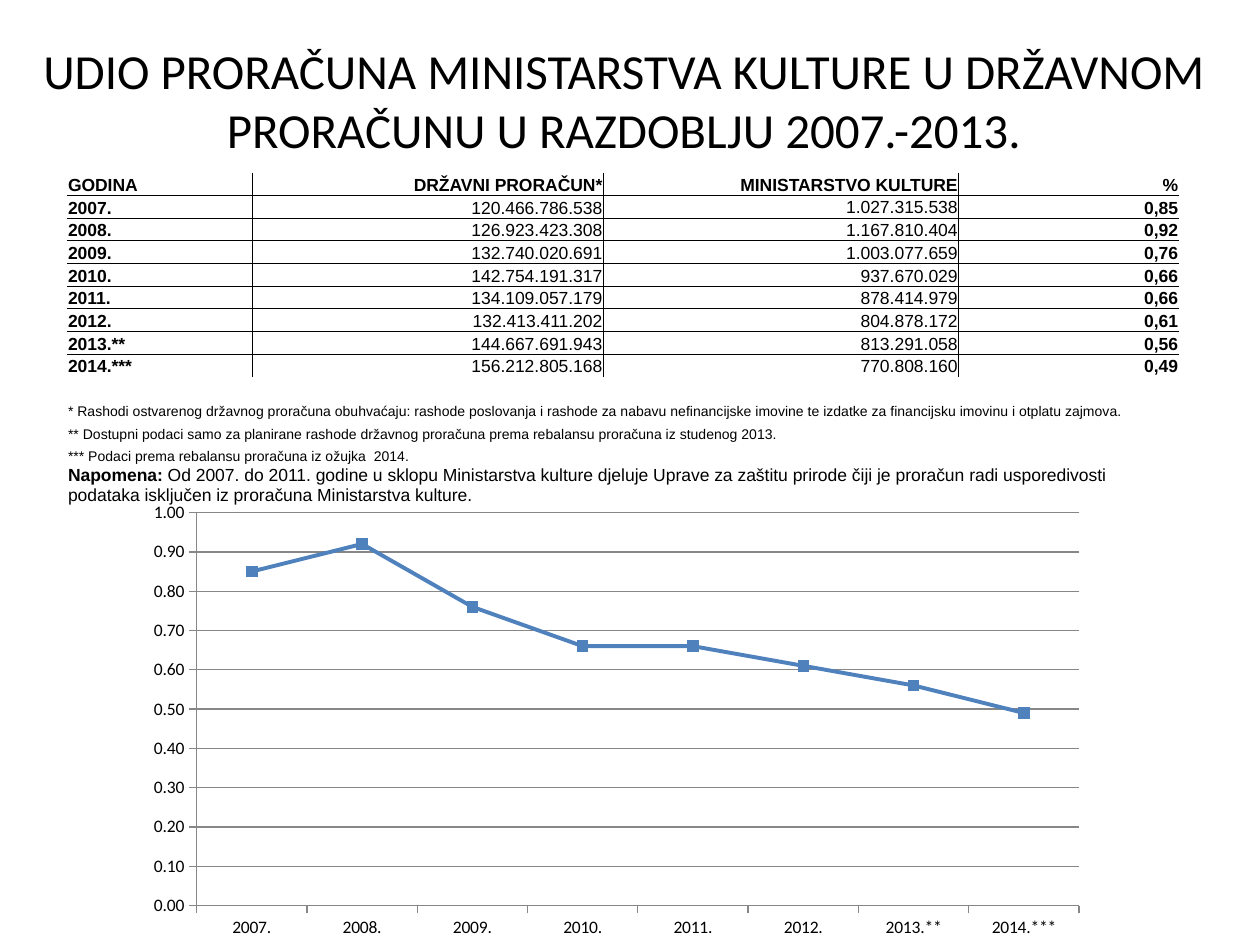
from lxml.etree import SubElement as Sub
from pptx import Presentation
from pptx.chart.data import CategoryChartData
from pptx.dml.color import RGBColor
from pptx.enum.chart import XL_CHART_TYPE as Kind, XL_MARKER_STYLE as Mark
from pptx.enum.chart import XL_TICK_MARK as Tick
from pptx.enum.text import MSO_ANCHOR as Anchor, MSO_AUTO_SIZE as Fit, PP_ALIGN as Align
from pptx.oxml import parse_xml
from pptx.oxml.ns import nsdecls, qn
from pptx.util import Inches, Pt

TITLE = "UDIO PRORAČUNA MINISTARSTVA KULTURE U DRŽAVNOM PRORAČUNU U RAZDOBLJU 2007.-2013."
HEAD = ("GODINA", "DRŽAVNI PRORAČUN*", "MINISTARSTVO KULTURE", "%")
YEARS = [
    ("2007.", "120.466.786.538", "1.027.315.538", "0,85"),
    ("2008.", "126.923.423.308", "1.167.810.404", "0,92"),
    ("2009.", "132.740.020.691", "1.003.077.659", "0,76"),
    ("2010.", "142.754.191.317", "937.670.029", "0,66"),
    ("2011.", "134.109.057.179", "878.414.979", "0,66"),
    ("2012.", "132.413.411.202", "804.878.172", "0,61"),
    ("2013.**", "144.667.691.943", "813.291.058", "0,56"),
    ("2014.***", "156.212.805.168", "770.808.160", "0,49"),
]
# Text and the number of columns it spans
NOTES = [
    ("* Rashodi ostvarenog državnog proračuna obuhvaćaju: rashode poslovanja i rashode za nabavu "
     "nefinancijske imovine te izdatke za financijsku imovinu i otplatu zajmova.", 4),
    ("** Dostupni podaci samo za planirane rashode državnog proračuna prema rebalansu proračuna "
     "iz studenog 2013.", 4),
    ("*** Podaci prema rebalansu proračuna iz ožujka  2014.", 2),
]
REMARK = ("Napomena:", " Od 2007. do 2011. godine u sklopu Ministarstva kulture djeluje Uprave za "
          "zaštitu prirode čiji je proračun radi usporedivosti podataka isključen iz proračuna "
          "Ministarstva kulture.")
WIDTHS = (1.47, 2.79, 2.82, 1.75)
HEIGHTS = [0.18] * 9 + [0.34, 0.18, 0.18, 0.39]
PLAIN = "{2D5ABB26-0587-4C30-8999-92F81FD0307C}"


def color(code):
    return RGBColor.from_string(code)


def style(font, size, name="Arial", bold=False):
    font.size, font.name, font.bold = Pt(size), name, bold
    font.color.rgb = color("000000")


def add_title(slide):
    title = slide.shapes.title
    title.left, title.top = Inches(0.01), Inches(0.27)
    title.width, title.height = Inches(9.88), Inches(1.04)
    frame = title.text_frame
    frame.text = TITLE
    frame.word_wrap, frame.auto_size = True, Fit.SHAPE_TO_FIT_TEXT
    frame.vertical_anchor = Anchor.MIDDLE
    para = frame.paragraphs[0]
    para.alignment = Align.CENTER
    style(para.runs[0].font, 28, "Calibri")


def set_edges(cell, sides):
    """Draw thin black lines on the named sides and none on the others."""
    props = cell._tc.get_or_add_tcPr()
    for side in "LRTB":
        fill = '<a:solidFill><a:srgbClr val="000000"/></a:solidFill>' if side in sides else "<a:noFill/>"
        props.append(parse_xml(f'<a:ln{side} {nsdecls("a")} w="{Pt(0.5)}">{fill}</a:ln{side}>'))


def fill_cell(cell, parts, size, align=Align.LEFT, anchor=Anchor.BOTTOM):
    """Put (text, bold) parts into one paragraph."""
    cell.vertical_anchor = anchor
    para = cell.text_frame.paragraphs[0]
    para.alignment = align
    for text, bold in parts:
        run = para.add_run()
        run.text = text
        style(run.font, size, bold=bold)


def add_budget(slide):
    shape = slide.shapes.add_table(len(HEIGHTS), len(WIDTHS), Inches(0.53), Inches(1.37),
                                   Inches(sum(WIDTHS)), Inches(sum(HEIGHTS)))
    table = shape.table
    table.first_row = table.horz_banding = False
    table._tbl.tblPr.find(qn("a:tableStyleId")).text = PLAIN
    for col, width in zip(table.columns, WIDTHS):
        col.width = Inches(width)
    for row, height in zip(table.rows, HEIGHTS):
        row.height = Inches(height)

    data = [HEAD] + YEARS
    last = len(data) - 1
    for r in range(len(HEIGHTS)):
        for c in range(len(WIDTHS)):
            cell = table.cell(r, c)
            cell.margin_left = cell.margin_right = cell.margin_top = Inches(0.01)
            cell.margin_bottom = 0
            sides = ""
            if r <= last:
                sides = ("L" * (c > 0) + "R" * (c < len(WIDTHS) - 1)
                         + "T" * (r > 0) + "B" * (r < last))
            set_edges(cell, sides)
            cell.fill.background()
            if r <= last:
                bold = r == 0 or c in (0, 3)
                fill_cell(cell, [(data[r][c], bold)], 10, Align.RIGHT if c else Align.LEFT,
                          Anchor.MIDDLE if (r, c) == (1, 2) else Anchor.BOTTOM)

    for r, (text, span) in enumerate(NOTES, last + 1):
        table.cell(r, 0).merge(table.cell(r, span - 1))
        fill_cell(table.cell(r, 0), [(text, False)], 8)
        for c in range(span, len(WIDTHS)):
            para = table.cell(r, c).text_frame.paragraphs[0]
            Sub(para._p, qn("a:endParaRPr"), sz="800")
    end = len(HEIGHTS) - 1
    table.cell(end, 0).merge(table.cell(end, 3))
    fill_cell(table.cell(end, 0), zip(REMARK, (True, False)), 10, anchor=Anchor.TOP)


def set_plot(chart, x, y, w, h):
    """Fix the inner plot area as fractions of the chart."""
    area = chart._chartSpace.chart.plotArea
    for old in area.findall(qn("c:layout")):
        area.remove(old)
    sizes = "".join(f'<c:{key} val="{val}"/>' for key, val in zip("xywh", (x, y, w, h)))
    area.insert(0, parse_xml(
        f'<c:layout {nsdecls("c")}><c:manualLayout><c:layoutTarget val="inner"/>'
        f'<c:xMode val="edge"/><c:yMode val="edge"/>{sizes}</c:manualLayout></c:layout>'))


def add_share(slide):
    data = CategoryChartData()
    data.categories = [row[0] for row in YEARS]
    data.add_series("Series 1", [float(row[3].replace(",", ".")) for row in YEARS])
    chart = slide.shapes.add_chart(Kind.LINE_MARKERS, Inches(1.01), Inches(3.99),
                                   Inches(7.87), Inches(3.9), data).chart
    chart.has_legend = chart.has_title = False
    style(chart.font, 10, "Calibri")
    set_plot(chart, 0.07, 0.02, 0.89, 0.8)

    vals = chart.value_axis
    vals.minimum_scale, vals.maximum_scale, vals.major_unit = 0, 1, 0.1
    vals.has_major_gridlines = True
    vals.tick_labels.number_format = "#,##0.00"
    vals.tick_labels.number_format_is_linked = False
    for axis in (vals, chart.category_axis):
        axis.major_tick_mark = Tick.OUTSIDE
    for line in (vals.format.line, chart.category_axis.format.line, vals.major_gridlines.format.line):
        line.color.rgb, line.width = color("878787"), Pt(0.75)

    plot = chart.plots[0]
    plot.vary_by_categories = False
    share = plot.series[0]
    share.smooth = False
    blue = color("4F81BD")
    share.format.line.color.rgb, share.format.line.width = blue, Pt(2.25)
    mark = share.marker
    mark.style, mark.size = Mark.SQUARE, 6
    mark.format.fill.solid()
    mark.format.fill.fore_color.rgb = mark.format.line.color.rgb = blue


def main():
    deck = Presentation()
    deck.slide_width, deck.slide_height = Inches(10), Inches(7.5)
    slide = deck.slides.add_slide(deck.slide_layouts[5])
    add_title(slide)
    add_budget(slide)
    add_share(slide)
    deck.save("out.pptx")


if __name__ == "__main__":
    main()
